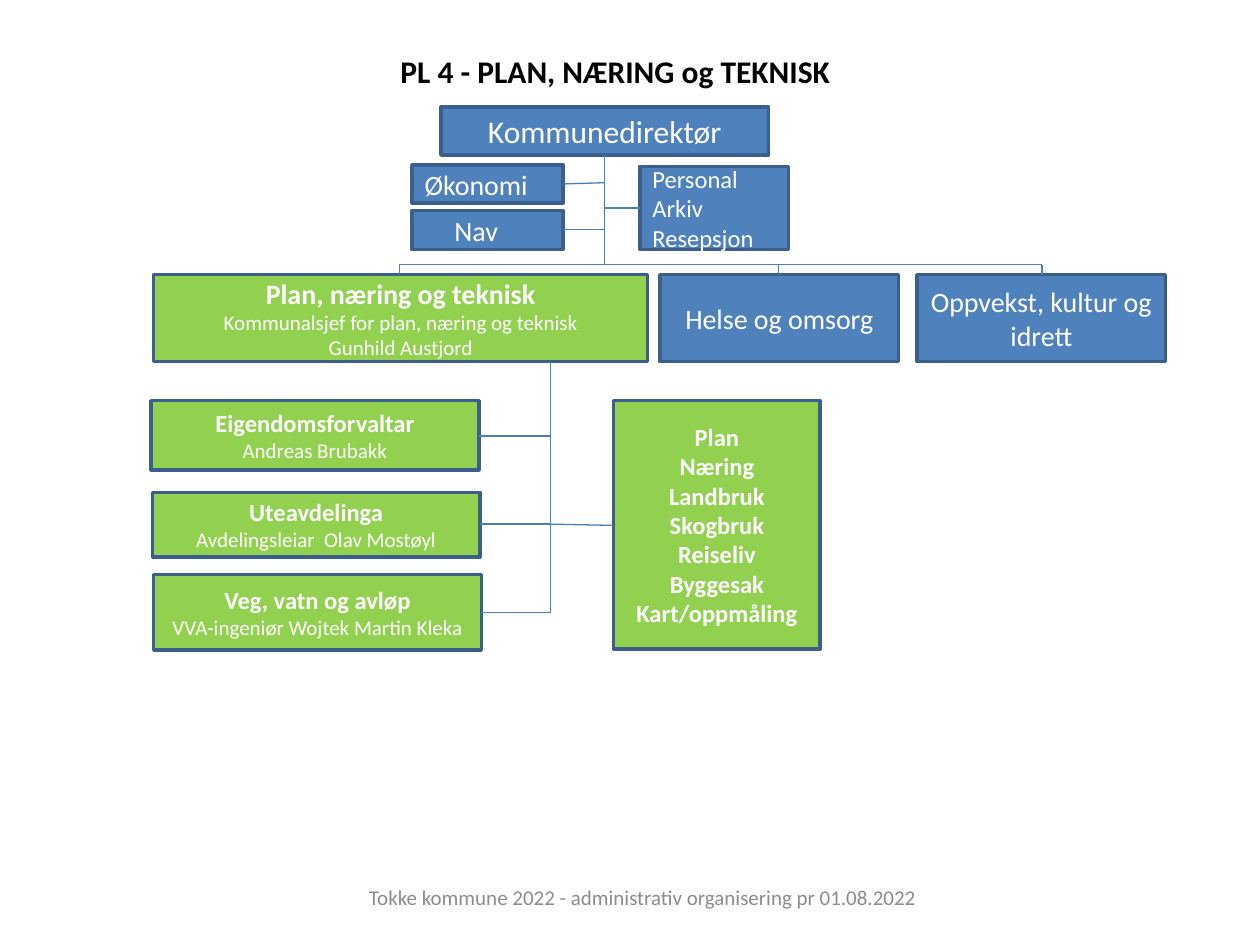
import pptx
import pptx.dml.color
import pptx.enum.shapes
import pptx.enum.text
import pptx.oxml.ns
import pptx.util
from lxml import etree

PX = 9144  # EMU per px, 100 px to the inch
BLUE, GREEN, BORDER, LINE = "4F81BD", "92D050", "3A5F8C", "4B7EBC"
WHITE, BLACK, GREY = "FFFFFF", "000000", "8C8C8C"
RECT = pptx.enum.shapes.MSO_SHAPE.RECTANGLE
PROCESS = pptx.enum.shapes.MSO_SHAPE.FLOWCHART_PROCESS
LEFT = pptx.enum.text.PP_ALIGN.LEFT
CENTER = pptx.enum.text.PP_ALIGN.CENTER
MIDDLE = pptx.enum.text.MSO_ANCHOR.MIDDLE


def rgb(color):
    return pptx.dml.color.RGBColor.from_string(color)


class OrgChart:
    font = "Calibri"

    def __init__(self, slide):
        self.slide = slide

    def set_lines(self, s, lines, color, align):
        """Fill a shape with lines given as (text, size, bold)."""
        tf = s.text_frame
        tf.word_wrap = True
        tf.vertical_anchor = MIDDLE
        tf.text = "\n".join(text for text, size, bold in lines)
        for p, (text, size, bold) in zip(tf.paragraphs, lines):
            p.alignment = align
            for r in p.runs:
                r.font.name = self.font
                r.font.size = pptx.util.Pt(size)
                r.font.bold = bold
                r.font.color.rgb = rgb(color)

    def text(self, x, y, w, h, line, color, align):
        s = self.slide.shapes.add_textbox(x * PX, y * PX, w * PX, h * PX)
        self.set_lines(s, [line], color, align)

    def box(self, x, y, w, h, lines, fill, kind=PROCESS, align=CENTER, right=10):
        s = self.slide.shapes.add_shape(kind, x * PX, y * PX, w * PX, h * PX)
        s.shadow.inherit = False
        s.fill.solid()
        s.fill.fore_color.rgb = rgb(fill)
        s.line.color.rgb = rgb(BORDER)
        s.line.width = pptx.util.Pt(2)
        self.set_lines(s, lines, WHITE, align)
        s.text_frame.margin_right = right * PX
        s.text_frame.margin_top = s.text_frame.margin_bottom = 0

    def line(self, x1, y1, x2, y2):
        s = self.slide.shapes.add_connector(
            pptx.enum.shapes.MSO_CONNECTOR.STRAIGHT, x1 * PX, y1 * PX, x2 * PX, y2 * PX)
        s.line.color.rgb = rgb(LINE)
        s.line.width = pptx.util.Pt(0.75)
        etree.SubElement(s._element.spPr, pptx.oxml.ns.qn("a:effectLst"))


def main():
    prs = pptx.Presentation()
    prs.slide_width, prs.slide_height = 1000 * PX, 750 * PX
    chart = OrgChart(prs.slides.add_slide(prs.slide_layouts[6]))

    chart.text(308, 36, 476, 40, ("PL 4 - PLAN, NÆRING og TEKNISK", 18, True), BLACK, LEFT)
    chart.text(140, 692, 740, 40,
               ("Tokke kommune 2022 - administrativ organisering pr 01.08.2022", 12, False),
               GREY, CENTER)

    # Director and staff functions
    chart.box(350, 85, 260, 38, [("Kommunedirektør", 18, False)], BLUE)
    for name, y, h in (("Økonomi", 131, 30), ("Nav", 167, 31)):
        chart.box(327, y, 120, h, [(name, 16, False)], BLUE, RECT, right=28)
    staff = [(name, 14, False) for name in ("Personal", "Arkiv", "Resepsjon")]
    chart.box(508, 132, 118, 66, staff, BLUE, RECT, LEFT)

    # Sectors
    chart.box(122, 218, 392, 69, [
        ("Plan, næring og teknisk", 16, True),
        ("Kommunalsjef for plan, næring og teknisk", 12, False),
        ("Gunhild Austjord", 12, False)], GREEN)
    chart.box(524, 218, 189, 69, [("Helse og omsorg", 16, False)], BLUE)
    chart.box(728, 218, 197, 69, [("Oppvekst, kultur og idrett", 16, False)], BLUE)

    # Units under plan, næring og teknisk
    units = (
        (120, 318, 55, "Eigendomsforvaltar", "Andreas Brubakk"),
        (121, 391, 51, "Uteavdelinga", "Avdelingsleiar  Olav Mostøyl"),
        (122, 456, 60, "Veg, vatn og avløp", "VVA-ingeniør Wojtek Martin Kleka"),
    )
    for x, y, h, unit, leader in units:
        chart.box(x, y, 260, h, [(unit, 14, True), (leader, 12, False)], GREEN)
    fields = ("Plan", "Næring", "Landbruk", "Skogbruk", "Reiseliv", "Byggesak", "Kart/oppmåling")
    chart.box(487, 318, 164, 197, [(name, 14, True) for name in fields], GREEN)

    # Director's trunk, staff branches and sector drops
    trunk, rail = 480, 210
    chart.line(trunk, 123, trunk, rail)
    chart.line(447, 146, trunk, 145)
    chart.line(447, 182, trunk, 182)
    chart.line(trunk, 165, 508, 165)
    chart.line(317, rail, 827, rail)
    for x in (317, 618, 827):
        chart.line(x, rail, x, 218)

    # Unit trunk and branches
    stem = 437
    chart.line(stem, 287, stem, 486)
    for x, y in ((380, 346), (381, 416), (382, 486)):
        chart.line(x, y, stem, y)
    chart.line(stem, 416, 487, 417)

    prs.save("out.pptx")


if __name__ == "__main__":
    main()
